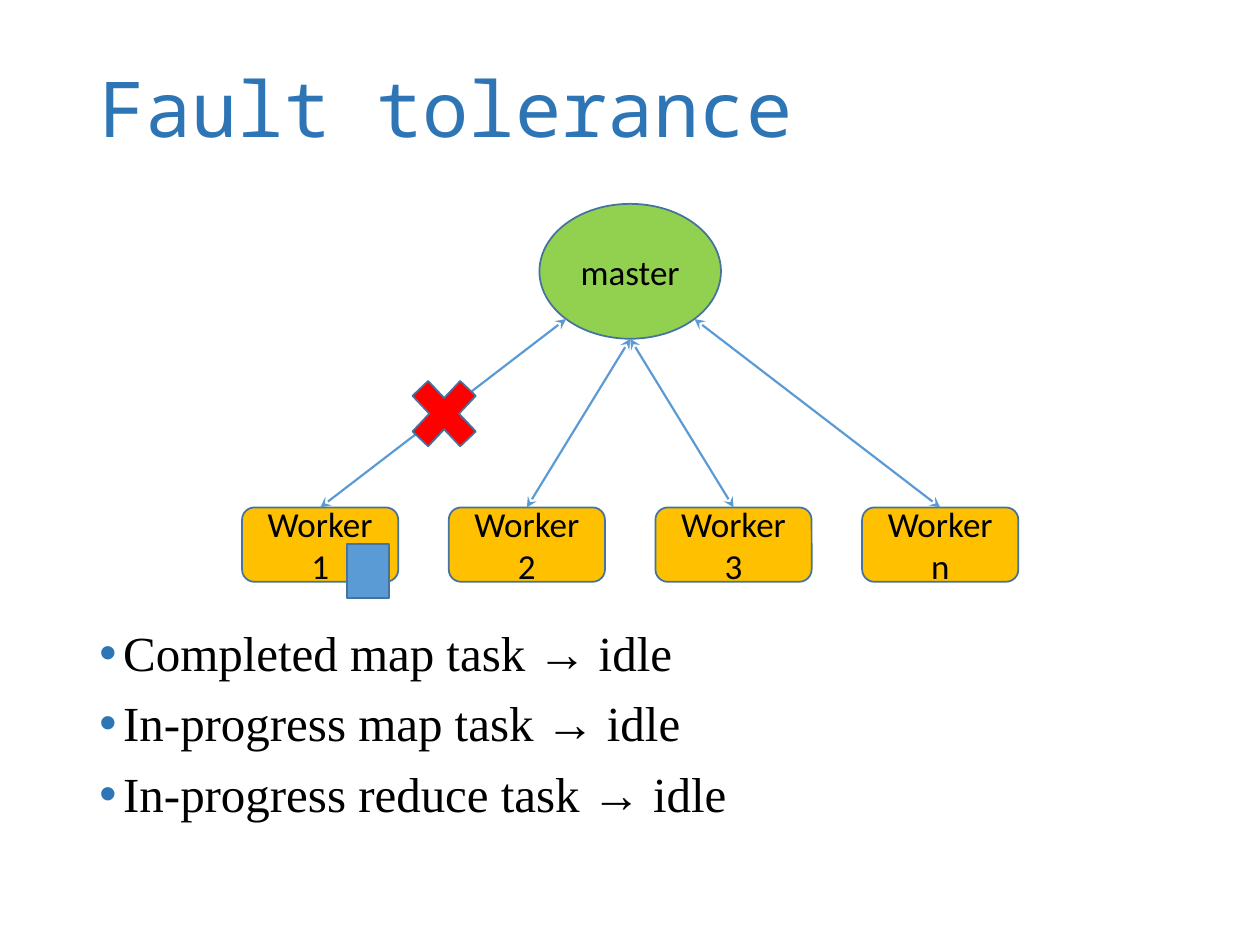
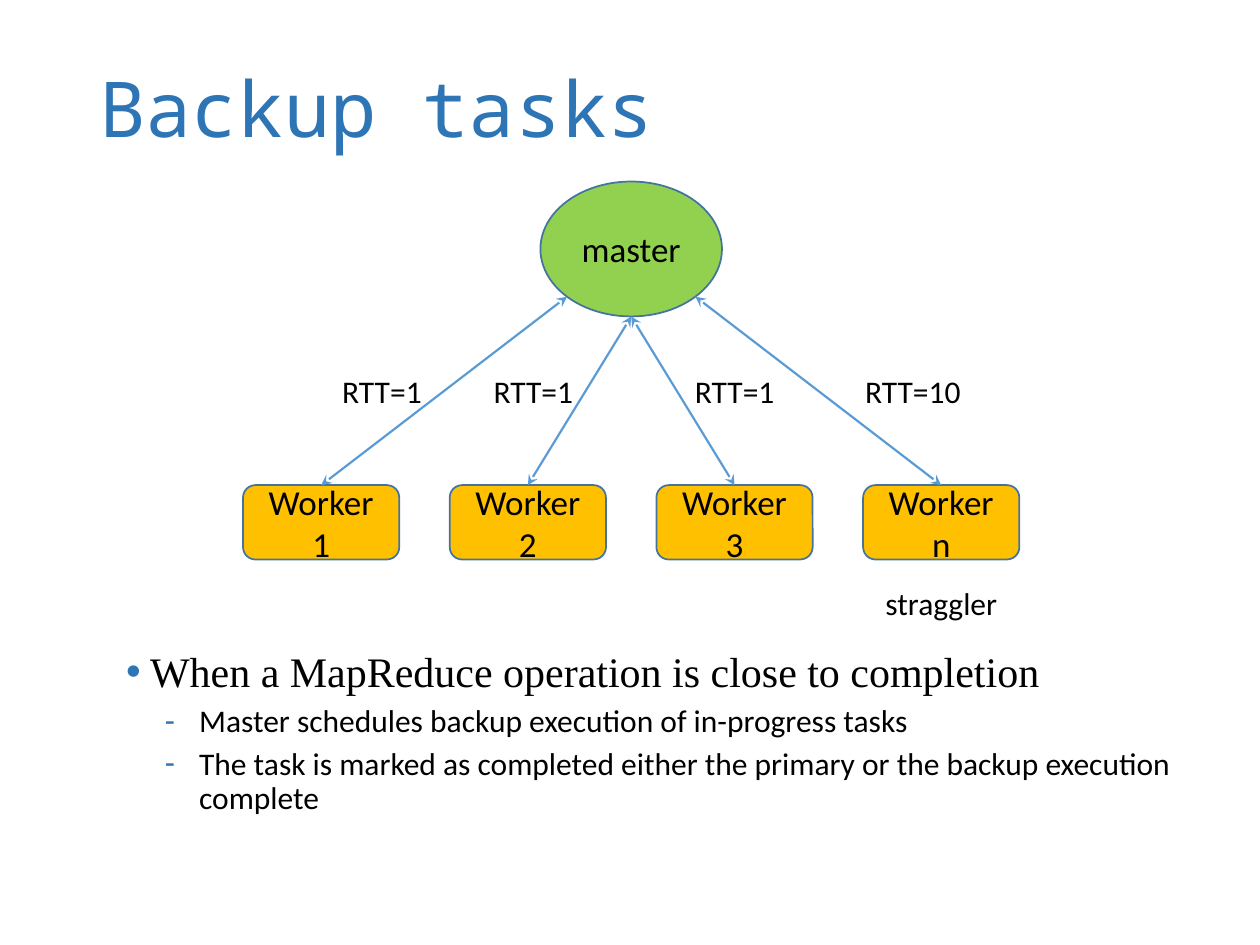
from collections import namedtuple
from math import sqrt

from lxml import etree
from pptx import Presentation
from pptx.dml.color import RGBColor
from pptx.enum.shapes import MSO_CONNECTOR, MSO_SHAPE
from pptx.enum.text import MSO_ANCHOR, MSO_AUTO_SIZE, PP_ALIGN
from pptx.oxml.ns import qn
from pptx.util import Cm, Pt

OVAL, ROUNDED = MSO_SHAPE.OVAL, MSO_SHAPE.ROUNDED_RECTANGLE
RECTANGLE, CROSS = MSO_SHAPE.RECTANGLE, MSO_SHAPE.MATH_MULTIPLY
STRAIGHT = MSO_CONNECTOR.STRAIGHT
LEFT, CENTER = PP_ALIGN.LEFT, PP_ALIGN.CENTER
MIDDLE, TOP = MSO_ANCHOR.MIDDLE, MSO_ANCHOR.TOP
NO_AUTOFIT = MSO_AUTO_SIZE.NONE

COLORS = {
    "title": "2E75B6",
    "text": "000000",
    "master": "92D050",
    "worker": "FFC000",
    "outline": "43739E",
    "link": "5B9BD5",
    "failure": "FF0000",
}
TITLE_FONT, LIST_FONT, LABEL_FONT = "Noto Sans Mono", "Times New Roman", "Calibri"

Box = namedtuple("Box", "left top width height")
ListLevel = namedtuple("ListLevel", "bullet bullet_font font margin indent space")

TITLE_BOX = Box(1.75, 0.43, 21.9, 3.68)
MASTER_SIZE = (3.66, 2.72)
WORKER_SIZE = (3.15, 1.5)
WORKERS = ("Worker 1", "Worker 2", "Worker 3", "Worker n")
LIST_LEVELS = (
    ListLevel("•", "Arial", LIST_FONT, 0.48, -0.48, 10),
    ListLevel("‐", LABEL_FONT, LABEL_FONT, 1.47, -0.69, 5),
)


def rgb(name):
    """Return the named palette colour."""
    return RGBColor.from_string(COLORS[name])


def inside(box, left, top, width, height):
    """Return a box given by its offset within another box."""
    return Box(box.left + left, box.top + top, width, height)


def lengths(box):
    """Return the four lengths of a box."""
    return [Cm(value) for value in box]


def format_font(paragraph, name, size, color="text"):
    """Set the font of a whole paragraph."""
    paragraph.font.name = name
    paragraph.font.size = Pt(size)
    paragraph.font.color.rgb = rgb(color)


def place(placeholder, box, anchor):
    """Move a placeholder and fix its text frame."""
    placeholder.left, placeholder.top, placeholder.width, placeholder.height = lengths(box)
    frame = placeholder.text_frame
    frame.auto_size = NO_AUTOFIT
    frame.vertical_anchor = anchor
    return frame


def add_titled_slide(presentation, title):
    """Add a slide with the shared title style."""
    slide = presentation.slides.add_slide(presentation.slide_layouts[1])
    frame = place(slide.shapes.title, TITLE_BOX, MIDDLE)
    frame.text = title
    paragraph = frame.paragraphs[0]
    paragraph.alignment = LEFT
    paragraph.line_spacing = 0.9
    format_font(paragraph, TITLE_FONT, 44, "title")
    return slide


def set_bullet(paragraph, level):
    """Give a paragraph its indent and coloured bullet."""
    properties = paragraph._p.get_or_add_pPr()
    properties.set("marL", str(Cm(level.margin)))
    properties.set("indent", str(Cm(level.indent)))
    color = etree.SubElement(properties, qn("a:buClr"))
    etree.SubElement(color, qn("a:srgbClr"), val=COLORS["title"])
    etree.SubElement(properties, qn("a:buFont"), typeface=level.bullet_font)
    etree.SubElement(properties, qn("a:buChar"), char=level.bullet)


def fill_list(slide, box, items, sizes):
    """Fill the body placeholder with (level, text) items."""
    frame = place(slide.placeholders[1], box, TOP)
    for index, (depth, text) in enumerate(items):
        paragraph = frame.add_paragraph() if index else frame.paragraphs[0]
        level = LIST_LEVELS[depth]
        paragraph.text = text
        paragraph.level = depth
        paragraph.line_spacing = 0.9
        paragraph.space_before = Pt(level.space)
        set_bullet(paragraph, level)
        format_font(paragraph, level.font, sizes[depth])


def add_figure(slide, kind, box, fill, text=""):
    """Add an outlined shape, with centred text if given."""
    shape = slide.shapes.add_shape(kind, *lengths(box))
    shape.shadow.inherit = False
    shape.fill.solid()
    shape.fill.fore_color.rgb = rgb(fill)
    shape.line.color.rgb = rgb("outline")
    shape.line.width = Pt(1)
    if text:
        shape.text_frame.text = text
        paragraph = shape.text_frame.paragraphs[0]
        paragraph.alignment = CENTER
        format_font(paragraph, LABEL_FONT, 20)
    return shape


def add_link(slide, left, top, worker):
    """Draw a two-headed arrow from a point to the top of a worker."""
    connector = slide.shapes.add_connector(STRAIGHT, Cm(left), Cm(top), 0, 0)
    connector.end_connect(worker, 0)
    connector.line.color.rgb = rgb("link")
    connector.line.width = Pt(1.25)
    properties = connector._element.spPr
    line = properties.find(qn("a:ln"))
    for end in ("a:headEnd", "a:tailEnd"):
        etree.SubElement(line, qn(end), type="stealth")
    etree.SubElement(properties, qn("a:effectLst"))


def add_network(slide, box):
    """Draw the master above a row of linked workers."""
    master_width, master_height = MASTER_SIZE
    worker_width, worker_height = WORKER_SIZE
    master = inside(box, (box.width - master_width) / 2, 0, *MASTER_SIZE)
    add_figure(slide, OVAL, master, "master", "master")

    center = master.left + master_width / 2
    side = master_width / 2 / sqrt(2)
    bottom = master.top + master_height
    shoulder = master.top + master_height / 2 * (1 + 1 / sqrt(2))
    starts = ((center - side, shoulder), (center, bottom),
              (center, bottom), (center + side, shoulder))

    pitch = (box.width - worker_width) / (len(WORKERS) - 1)
    for index, (name, start) in enumerate(zip(WORKERS, starts)):
        worker_box = inside(box, index * pitch, box.height - worker_height, *WORKER_SIZE)
        worker = add_figure(slide, ROUNDED, worker_box, "worker", name)
        add_link(slide, *start, worker)


def add_label(slide, box, text):
    """Add an unwrapped caption."""
    frame = slide.shapes.add_textbox(*lengths(box)).text_frame
    frame.word_wrap = False
    frame.text = text
    format_font(frame.paragraphs[0], LABEL_FONT, 18)


def build_fault_tolerance(presentation):
    """Build the slide on a failed worker."""
    slide = add_titled_slide(presentation, "Fault tolerance")
    network = Box(4.88, 4.11, 15.65, 7.62)
    add_network(slide, network)
    add_figure(slide, CROSS, inside(network, 3.15, 3.25, 1.85, 1.96), "failure")
    add_figure(slide, RECTANGLE, inside(network, 2.11, 6.86, 0.86, 1.09), "link")
    tasks = ("Completed map task", "In-progress map task", "In-progress reduce task")
    items = [(0, f"{task} → idle") for task in tasks]
    fill_list(slide, Box(1.75, 12.55, 17.65, 4.57), items, (28,))


def build_backup_tasks(presentation):
    """Build the slide on stragglers and backup execution."""
    slide = add_titled_slide(presentation, "Backup tasks")
    network = Box(4.9, 3.66, 15.65, 7.62)
    add_network(slide, network)
    labels = (
        ("RTT=1", 1.75, 3.71, 2.13),
        ("RTT=1", 4.8, 3.71, 2.13),
        ("RTT=1", 8.86, 3.71, 2.13),
        ("RTT=10", 12.29, 3.71, 2.46),
        ("straggler", 12.7, 7.98, 2.79),
    )
    for text, left, top, width in labels:
        add_label(slide, inside(network, left, top, width, 1.02), text)
    items = (
        (0, "When a MapReduce operation is close to completion"),
        (1, "Master schedules backup execution of in-progress tasks"),
        (1, "The task is marked as completed either the primary or the backup execution complete"),
    )
    fill_list(slide, Box(2.29, 13, 21.9, 4.32), items, (24, 18))


def main():
    """Build and save the presentation."""
    presentation = Presentation()
    presentation.slide_width, presentation.slide_height = Cm(25.4), Cm(19.05)
    build_fault_tolerance(presentation)
    build_backup_tasks(presentation)
    presentation.save("out.pptx")


if __name__ == "__main__":
    main()
